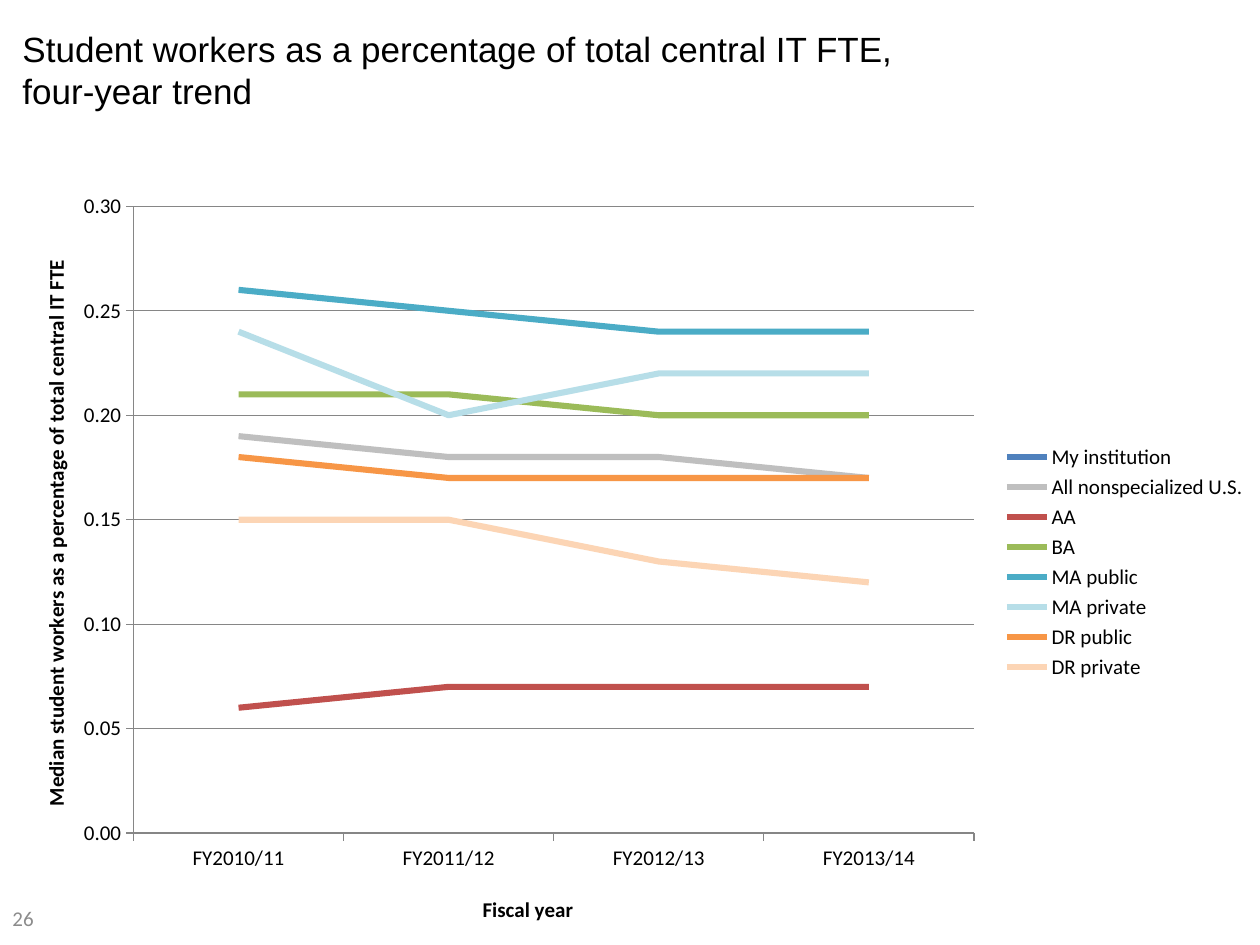
from dataclasses import dataclass

from lxml import etree
from pptx import Presentation
from pptx.chart.data import CategoryChartData
from pptx.dml.color import RGBColor
from pptx.enum.chart import XL_CHART_TYPE, XL_LEGEND_POSITION, XL_MARKER_STYLE, XL_TICK_MARK
from pptx.enum.text import MSO_ANCHOR
from pptx.oxml.ns import qn
from pptx.util import Inches, Pt

LINE_CHART = XL_CHART_TYPE.LINE
LEGEND_RIGHT = XL_LEGEND_POSITION.RIGHT
NO_MARKER = XL_MARKER_STYLE.NONE
TICK_OUTSIDE = XL_TICK_MARK.OUTSIDE
TOP, MIDDLE = MSO_ANCHOR.TOP, MSO_ANCHOR.MIDDLE


@dataclass(frozen=True)
class Theme:
    heading_font: str = "Arial"
    body_font: str = "Calibri"
    ink: str = "000000"
    muted: str = "8C8C8C"
    rule: str = "868686"
    heading_size: float = 20
    body_size: float = 12
    series_width: float = 3.5
    rule_width: float = 0.75


YEARS = ["FY2010/11", "FY2011/12", "FY2012/13", "FY2013/14"]
SERIES = [
    ("My institution", [None] * 4, "4F81BD"),
    ("All nonspecialized U.S.", [0.19, 0.18, 0.18, 0.17], "BFBFBF"),
    ("AA", [0.06, 0.07, 0.07, 0.07], "C0504D"),
    ("BA", [0.21, 0.21, 0.20, 0.20], "9BBB59"),
    ("MA public", [0.26, 0.25, 0.24, 0.24], "4BACC6"),
    ("MA private", [0.24, 0.20, 0.22, 0.22], "B7DEE8"),
    ("DR public", [0.18, 0.17, 0.17, 0.17], "F79646"),
    ("DR private", [0.15, 0.15, 0.13, 0.12], "FCD5B5"),
]


def apply(target, **values):
    for name, value in values.items():
        setattr(target, name, value)


def place(element, index, **shares):
    """Fix a chart part at shares of the chart's size."""
    for old in element.findall(qn("c:layout")):
        element.remove(old)
    layout = etree.Element(qn("c:layout"))
    manual = etree.SubElement(layout, qn("c:manualLayout"))
    settings = {"xMode": "edge", "yMode": "edge", **shares}
    if "w" in shares:
        settings = {"layoutTarget": "inner", **settings}
    for name, value in settings.items():
        etree.SubElement(manual, qn(f"c:{name}")).set("val", str(value))
    element.insert(index, layout)


class SlideBuilder:
    def __init__(self, deck, theme):
        self.deck, self.theme = deck, theme
        self.page = deck.slides.add_slide(deck.slide_layouts[6])

    def area(self, left, top, width, height):
        """Turn shares of the slide's size into lengths."""
        across, down = self.deck.slide_width, self.deck.slide_height
        return [int(share * whole) for share, whole in
                zip((left, top, width, height), (across, down, across, down))]

    def style(self, font, name, size, color, bold=False):
        apply(font, name=name, size=Pt(size), bold=bold)
        font.color.rgb = RGBColor.from_string(color)

    def stroke(self, line, color, width):
        line.color.rgb = RGBColor.from_string(color)
        line.width = Pt(width)

    def text(self, words, area, anchor, *font_style):
        frame = self.page.shapes.add_textbox(*self.area(*area)).text_frame
        apply(frame, word_wrap=True, vertical_anchor=anchor)
        para = frame.paragraphs[0]
        para.text = words
        for span in para.runs:
            self.style(span.font, *font_style)

    def axis(self, axis, title, x, y):
        theme = self.theme
        apply(axis, major_tick_mark=TICK_OUTSIDE, has_title=True)
        self.stroke(axis.format.line, theme.rule, theme.rule_width)
        para = axis.axis_title.text_frame.paragraphs[0]
        para.text = title
        self.style(para.runs[0].font, theme.body_font, theme.body_size, theme.ink, True)
        place(axis.axis_title._element, 1, x=x, y=y)

    def line_chart(self, area, years, series, year_title, value_title):
        theme = self.theme
        data = CategoryChartData(number_format="#,##0.00")
        data.categories = years
        for name, values, _ in series:
            data.add_series(name, values)
        chart = self.page.shapes.add_chart(LINE_CHART, *self.area(*area), data).chart
        apply(chart, has_title=False, has_legend=True)
        apply(chart.legend, position=LEGEND_RIGHT, include_in_layout=False)
        self.style(chart.font, theme.body_font, theme.body_size, theme.ink)

        plot = chart.plots[0]
        plot.vary_by_categories = False
        for line, (_, _, color) in zip(plot.series, series):
            line.smooth = False
            line.marker.style = NO_MARKER
            self.stroke(line.format.line, color, theme.series_width)

        self.axis(chart.category_axis, year_title, 0.38, 0.93)
        values = chart.value_axis
        self.axis(values, value_title, 0.03, 0.1)
        apply(values, minimum_scale=0, maximum_scale=0.3, major_unit=0.05,
              has_major_gridlines=True)
        apply(values.tick_labels, number_format="#,##0.00", number_format_is_linked=False)
        self.stroke(values.major_gridlines.format.line, theme.rule, theme.rule_width)
        place(chart._chartSpace.chart.plotArea, 0, x=0.106, y=0.035, w=0.667, h=0.819)


def main():
    deck = Presentation()
    apply(deck, slide_width=Inches(10), slide_height=Inches(7.5))
    theme = Theme()
    builder = SlideBuilder(deck, theme)
    builder.text("Student workers as a percentage of total central IT FTE,\vfour-year trend",
                 (0.008, 0.023, 0.935, 0.133), TOP,
                 theme.heading_font, theme.heading_size, theme.ink)
    builder.line_chart((0, 0.19, 1, 0.81), YEARS, SERIES, "Fiscal year",
                       "Median student workers as a percentage of total central IT FTE")
    builder.text("26", (0, 0.944, 0.108, 0.056), MIDDLE,
                 theme.body_font, theme.body_size, theme.muted)
    deck.save("out.pptx")


if __name__ == "__main__":
    main()
